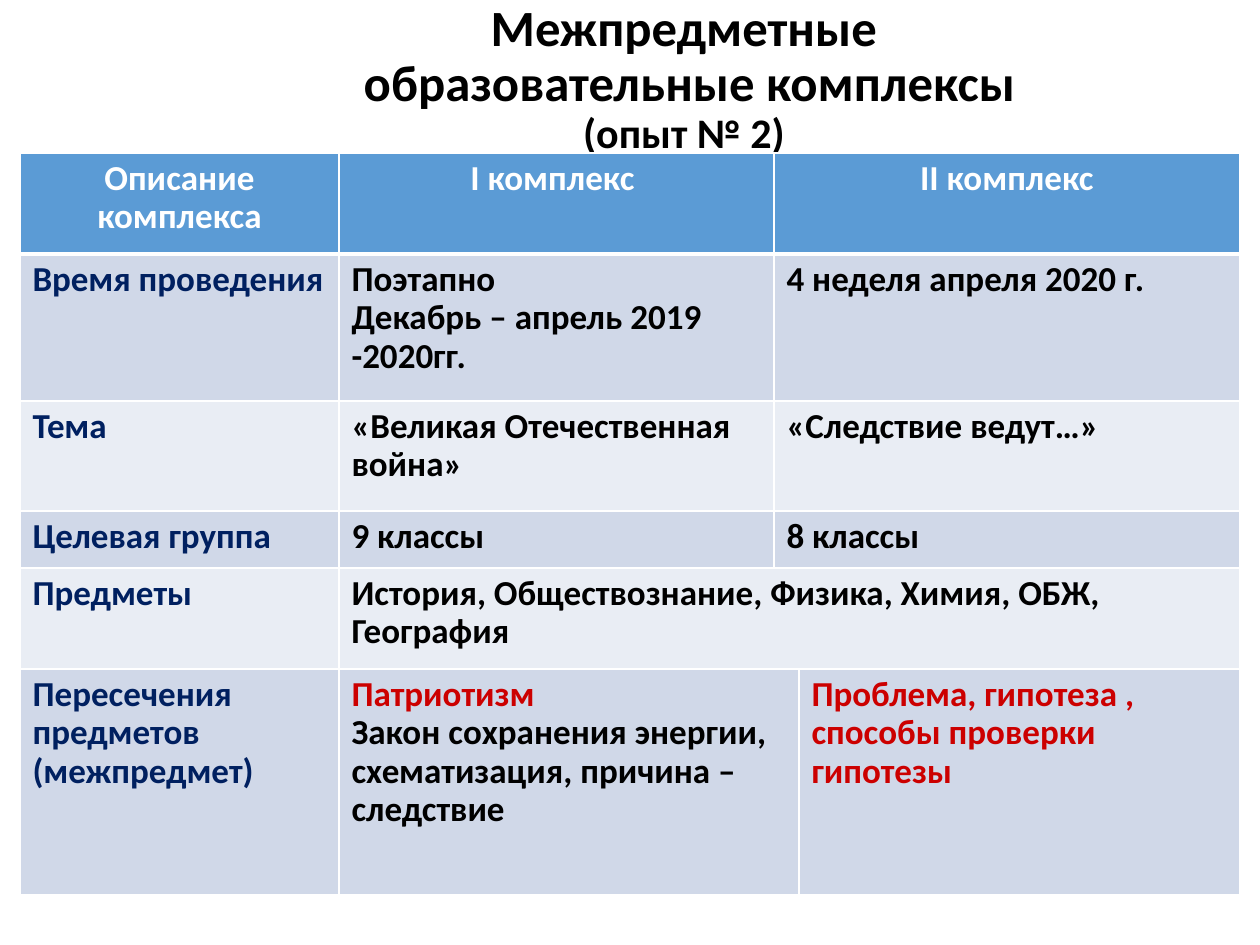
from dataclasses import dataclass

from lxml import etree
from pptx import Presentation
from pptx import util as u
from pptx.dml.color import RGBColor
from pptx.enum import text
from pptx.oxml.ns import qn


@dataclass(frozen=True)
class Theme:
    font: str = "Calibri"
    title_size: int = 29
    subtitle_size: int = 24
    cell_size: int = 20
    line_spacing: float = 0.9
    black: str = "000000"
    white: str = "FFFFFF"
    navy: str = "002060"
    red: str = "CC0000"
    header: str = "5B9BD5"
    odd_row: str = "D0D8E8"
    even_row: str = "E9EDF4"


THEME = Theme()
COLUMN_WIDTHS = [319, 435, 25, 441]
ROW_HEIGHTS = [101, 147, 110, 57, 101, 226]
MERGES = [(row, 2, 3) for row in range(4)] + [(4, 1, 3), (5, 1, 2)]
ROWS = [
    {0: "Описание комплекса", 1: "I комплекс ", 2: " II комплекс "},
    {0: "Время проведения", 1: "Поэтапно\nДекабрь – апрель 2019 -2020гг.",
     2: "4 неделя апреля 2020 г."},
    {0: "Тема", 1: "«Великая Отечественная война»", 2: "«Следствие ведут…»"},
    {0: "Целевая группа", 1: "9 классы", 2: "8 классы"},
    {0: "Предметы", 1: "История, Обществознание, Физика, Химия, ОБЖ, География"},
    {0: "Пересечения предметов (межпредмет)",
     1: "Патриотизм\nЗакон сохранения энергии, схематизация, причина – следствие",
     3: "Проблема, гипотеза , способы проверки гипотезы"},
]
RED_PARAGRAPHS = {(5, 1, 0), (5, 3, 0)}


def px(length):
    return u.Emu(round(length * 914400 / 126))


def format_paragraph(paragraph, size, color, centered):
    paragraph.line_spacing = THEME.line_spacing
    paragraph.alignment = text.PP_ALIGN.CENTER if centered else text.PP_ALIGN.LEFT
    for run in paragraph.runs:
        run.font.name = THEME.font
        run.font.size = u.Pt(size)
        run.font.bold = True
        run.font.color.rgb = RGBColor.from_string(color)


def add_title(slide, left, top, width, height):
    frame = slide.shapes.add_textbox(px(left), px(top), px(width), px(height)).text_frame
    frame.word_wrap = True
    frame.vertical_anchor = text.MSO_ANCHOR.MIDDLE
    paragraph = frame.paragraphs[0]
    paragraph.text = "Межпредметные\v образовательные комплексы\v(опыт № 2)"
    format_paragraph(paragraph, THEME.title_size, THEME.black, True)
    paragraph.runs[-1].font.size = u.Pt(THEME.subtitle_size)


def set_borders(cell, row):
    properties = cell._tc.get_or_add_tcPr()
    widths = {"lnL": 1, "lnR": 1, "lnT": 3 if row == 1 else 1, "lnB": 3 if row == 0 else 1}
    for side, width in widths.items():
        line = etree.SubElement(properties, qn(f"a:{side}"), w=str(u.Pt(width)))
        fill = etree.SubElement(line, qn("a:solidFill"))
        etree.SubElement(fill, qn("a:srgbClr"), val=THEME.white)


def text_color(row, column, index):
    if row == 0:
        return THEME.white
    if column == 0:
        return THEME.navy
    return THEME.red if (row, column, index) in RED_PARAGRAPHS else THEME.black


def fill_cell(cell, row, column):
    set_borders(cell, row)
    cell.fill.solid()
    band = THEME.odd_row if row % 2 else THEME.even_row
    cell.fill.fore_color.rgb = RGBColor.from_string(THEME.header if row == 0 else band)
    cell.text_frame.text = ROWS[row].get(column, "")
    for index, paragraph in enumerate(cell.text_frame.paragraphs):
        format_paragraph(paragraph, THEME.cell_size, text_color(row, column, index), row == 0)


def add_complex_table(slide, left, top):
    table = slide.shapes.add_table(
        len(ROW_HEIGHTS), len(COLUMN_WIDTHS), px(left), px(top),
        px(sum(COLUMN_WIDTHS)), px(sum(ROW_HEIGHTS))).table
    for column, width in zip(table.columns, COLUMN_WIDTHS):
        column.width = px(width)
    for row, height in zip(table.rows, ROW_HEIGHTS):
        row.height = px(height)
    for row in range(len(ROW_HEIGHTS)):
        for column in range(len(COLUMN_WIDTHS)):
            fill_cell(table.cell(row, column), row, column)
    for row, first, last in MERGES:
        table.cell(row, first).merge(table.cell(row, last))


def main():
    presentation = Presentation()
    presentation.slide_width, presentation.slide_height = px(1260), px(945)
    slide = presentation.slides.add_slide(presentation.slide_layouts[6])
    add_title(slide, 108, 15, 1152, 130)
    add_complex_table(slide, 20, 153)
    presentation.save("out.pptx")


if __name__ == "__main__":
    main()
